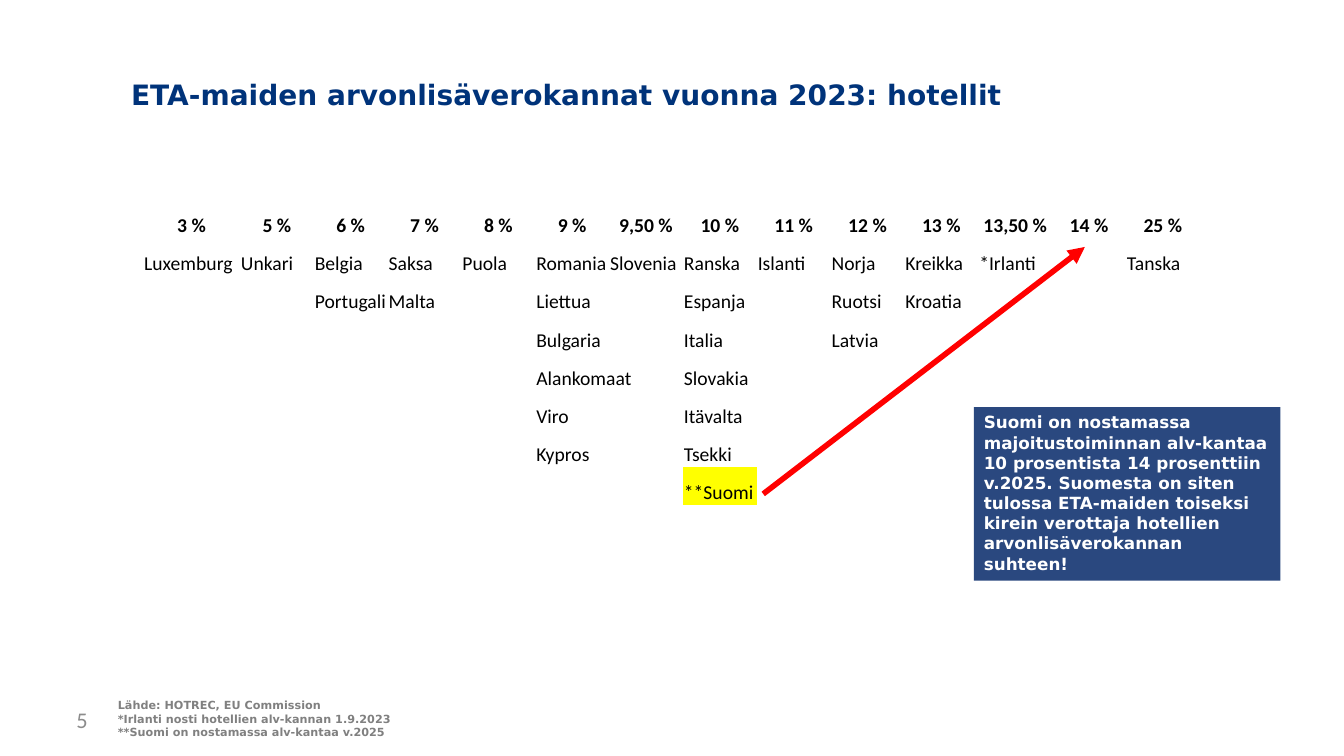
from dataclasses import dataclass

from lxml import etree
from pptx import Presentation
from pptx.dml.color import RGBColor
from pptx.enum.shapes import MSO_CONNECTOR, MSO_SHAPE
from pptx.enum.text import MSO_ANCHOR, MSO_AUTO_SIZE, PP_ALIGN
from pptx.oxml.ns import qn
from pptx.util import Inches, Pt

LEFT, CENTER = PP_ALIGN.LEFT, PP_ALIGN.CENTER
TOP, MIDDLE, BOTTOM = MSO_ANCHOR.TOP, MSO_ANCHOR.MIDDLE, MSO_ANCHOR.BOTTOM
NO_FIT = MSO_AUTO_SIZE.NONE
RECTANGLE = MSO_SHAPE.RECTANGLE
STRAIGHT = MSO_CONNECTOR.STRAIGHT
TITLE_ONLY = 5
PLAIN_TABLE_STYLE = "{2D5ABB26-0587-4C30-8999-92F81FD0307C}"


@dataclass(frozen=True)
class TextStyle:
    font: str
    size: int
    color: str
    bold: bool = False


@dataclass(frozen=True)
class Theme:
    title = TextStyle("DejaVu Sans", 20, "00337A", True)
    rate = TextStyle("Calibri", 14, "000000", True)
    country = TextStyle("Calibri", 14, "000000")
    callout = TextStyle("DejaVu Sans", 12, "FFFFFF", True)
    source = TextStyle("DejaVu Sans", 8, "808080", True)
    number = TextStyle("Calibri", 16, "8C8C8C")
    callout_fill = "2A487F"
    highlight = "FFFF00"
    arrow = "FF0000"
    arrow_width = 4


THEME = Theme()

TITLE = "ETA-maiden arvonlisäverokannat vuonna 2023: hotellit"
RISING_COUNTRY = "**Suomi"
WIDE_COUNTRY = "Alankomaat"
RATES = [
    ("3 %", ["Luxemburg"]),
    ("5 %", ["Unkari"]),
    ("6 %", ["Belgia", "Portugali"]),
    ("7 %", ["Saksa", "Malta"]),
    ("8 %", ["Puola"]),
    ("9 %", ["Romania", "Liettua", "Bulgaria", WIDE_COUNTRY, "Viro", "Kypros"]),
    ("9,50 %", ["Slovenia"]),
    ("10 %", ["Ranska", "Espanja", "Italia", "Slovakia", "Itävalta", "Tsekki",
              RISING_COUNTRY]),
    ("11 %", ["Islanti"]),
    ("12 %", ["Norja", "Ruotsi", "Latvia"]),
    ("13 %", ["Kreikka", "Kroatia"]),
    ("13,50 %", ["*Irlanti"]),
    ("14 %", []),
    ("25 %", ["Tanska"]),
]
CALLOUT = (
    "Suomi on nostamassa majoitustoiminnan alv-kantaa 10 prosentista "
    "14 prosenttiin v.2025. Suomesta on siten tulossa ETA-maiden toiseksi "
    "kirein verottaja hotellien arvonlisäverokannan suhteen!"
)
SOURCES = [
    "Lähde: HOTREC, EU Commission",
    "*Irlanti nosti hotellien alv-kannan 1.9.2023",
    "**Suomi on nostamassa alv-kantaa v.2025",
]


def rgb(color):
    return RGBColor.from_string(color)


def write(frame, lines, style, align=LEFT, anchor=TOP):
    """Fill a text frame with one paragraph per line in a single style."""
    frame.text = "\n".join(lines)
    frame.vertical_anchor = anchor
    for para in frame.paragraphs:
        para.alignment = align
        para.font.name = style.font
        para.font.size = Pt(style.size)
        para.font.bold = style.bold
        para.font.color.rgb = rgb(style.color)


def place_title(page, left, top, width, height):
    title = page.shapes.title
    title.left, title.top = Inches(left), Inches(top)
    title.width, title.height = Inches(width), Inches(height)
    frame = title.text_frame
    write(frame, [TITLE], THEME.title, anchor=MIDDLE)
    frame.auto_size = NO_FIT
    frame.word_wrap = True
    frame.margin_bottom = Inches(0.37)


def add_text(page, left, top, width, height, lines, style, anchor=TOP, wrap=True):
    box = page.shapes.add_textbox(
        Inches(left), Inches(top), Inches(width), Inches(height))
    write(box.text_frame, lines, style, anchor=anchor)
    box.text_frame.word_wrap = wrap


def fill_cell(cell, text, style, align):
    cell.margin_left = cell.margin_right = cell.margin_top = Inches(0.01)
    cell.margin_bottom = 0
    write(cell.text_frame, [text], style, align)
    cell.vertical_anchor = BOTTOM
    if text == RISING_COUNTRY:
        cell.fill.solid()
        cell.fill.fore_color.rgb = rgb(THEME.highlight)
    else:
        cell.fill.background()


def add_rate_table(page, left, top, width, height, first_width):
    """Put each VAT rate at the head of a column of its countries."""
    row_count = 1 + max(len(countries) for _, countries in RATES)
    table = page.shapes.add_table(
        row_count, len(RATES),
        Inches(left), Inches(top), Inches(width), Inches(height)).table
    table.first_row = table.horz_banding = False
    table._tbl.tblPr.find(qn("a:tableStyleId")).text = PLAIN_TABLE_STYLE

    other_width = (width - first_width) / (len(RATES) - 1)
    for row in table.rows:
        row.height = Inches(height / row_count)
    for index, (rate, countries) in enumerate(RATES):
        table.columns[index].width = Inches(other_width if index else first_width)
        fill_cell(table.cell(0, index), rate, THEME.rate, CENTER)
        for row in range(1, row_count):
            country = countries[row - 1] if row <= len(countries) else ""
            cell = table.cell(row, index)
            fill_cell(cell, country, THEME.country, LEFT)
            if country == WIDE_COUNTRY:
                cell.merge(table.cell(row, index + 1))


def add_arrow(page, start_x, start_y, end_x, end_y):
    arrow = page.shapes.add_connector(
        STRAIGHT, Inches(start_x), Inches(start_y), Inches(end_x), Inches(end_y))
    arrow.line.color.rgb = rgb(THEME.arrow)
    arrow.line.width = Pt(THEME.arrow_width)
    etree.SubElement(arrow.line._get_or_add_ln(), qn("a:tailEnd"), type="triangle")
    etree.SubElement(arrow._element.spPr, qn("a:effectLst"))


def add_callout(page, left, top, width, height):
    callout = page.shapes.add_shape(
        RECTANGLE, Inches(left), Inches(top), Inches(width), Inches(height))
    callout.shadow.inherit = False
    callout.fill.solid()
    callout.fill.fore_color.rgb = rgb(THEME.callout_fill)
    callout.line.fill.background()
    write(callout.text_frame, [CALLOUT], THEME.callout)
    callout.text_frame.word_wrap = True


def build_rates_slide(deck):
    page = deck.slides.add_slide(deck.slide_layouts[TITLE_ONLY])
    add_text(page, 0.66, 6.94, 3.11, 0.4, ["5"], THEME.number, anchor=MIDDLE)
    place_title(page, 1.2, 0.51, 9.06, 1.18)
    add_text(page, 1.07, 6.88, 2.98, 0.5, SOURCES, THEME.source, wrap=False)
    add_rate_table(page, 1.42, 1.98, 10.48, 3.03, first_width=0.96)
    add_arrow(page, 7.57, 4.9, 10.76, 2.45)
    add_callout(page, 9.66, 4.04, 3.04, 1.72)


def main():
    deck = Presentation()
    deck.slide_width, deck.slide_height = Inches(13.33), Inches(7.5)
    build_rates_slide(deck)
    deck.save("out.pptx")


if __name__ == "__main__":
    main()
